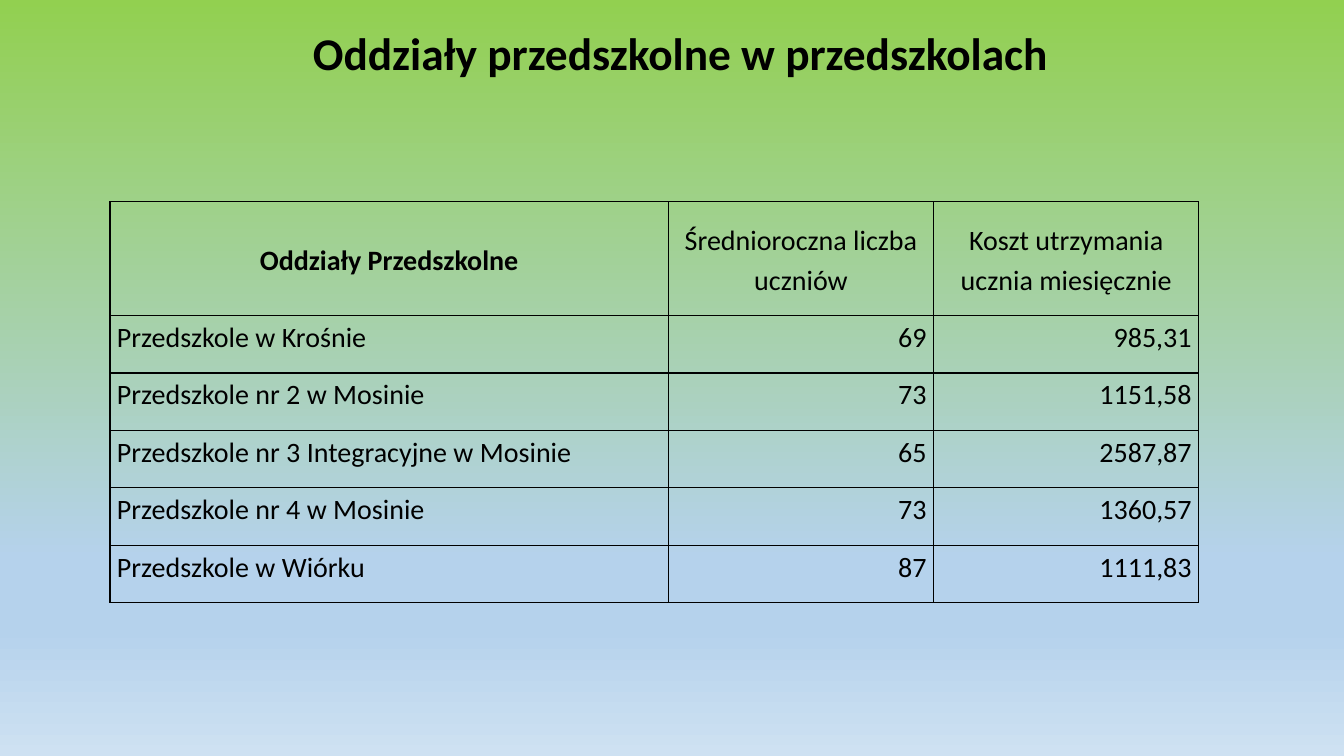
from pptx import Presentation
from pptx.dml.color import RGBColor
from pptx.enum.text import MSO_ANCHOR, PP_ALIGN
from pptx.oxml.ns import qn
from pptx.util import Inches, Pt
from lxml import etree

LEFT, CENTER, RIGHT = PP_ALIGN.LEFT, PP_ALIGN.CENTER, PP_ALIGN.RIGHT
TOP, MIDDLE = MSO_ANCHOR.TOP, MSO_ANCHOR.MIDDLE

# Content
TITLE = "Oddziały przedszkolne w przedszkolach\v"
HEADER = ("Oddziały Przedszkolne", "Średnioroczna liczba uczniów",
          "Koszt utrzymania ucznia miesięcznie")
ROWS = [
    ("Przedszkole w Krośnie", "69", "985,31"),
    ("Przedszkole nr 2 w Mosinie", "73", "1151,58"),
    ("Przedszkole nr 3 Integracyjne w Mosinie", "65", "2587,87"),
    ("Przedszkole nr 4 w Mosinie", "73", "1360,57"),
    ("Przedszkole w Wiórku", "87", "1111,83"),
]

THEME = {
    "font": "Calibri",
    "ink": "000000",
    "title_size": 32.4,
    "table_size": 20,
    "border_width": 1,
    "background": [(0, "92D050"), (74, "B5D2EC"), (83, "B5D2EC"), (100, "CEE1F2")],
}

# Layout in inches
TITLE_BOX = (1, 0.64, 11.5, 0.57)
TABLE_LEFT, TABLE_TOP = 1.09, 2
COLUMN_WIDTHS = (5.54, 2.63, 2.63)
ROW_HEIGHTS = [1.13] + [0.57] * len(ROWS)


def format_runs(paragraph, size, bold):
    for run in paragraph.runs:
        run.font.name = THEME["font"]
        run.font.size = Pt(size)
        run.font.bold = bold
        run.font.color.rgb = RGBColor.from_string(THEME["ink"])


def add_color(parent, color):
    etree.SubElement(parent, qn("a:srgbClr"), val=color)


def paint_background(slide):
    fill = slide.background.fill
    fill.gradient()
    fill.gradient_angle = 270
    stops = slide.element.find(".//" + qn("a:gsLst"))
    for stop in list(stops):
        stops.remove(stop)
    for percent, color in THEME["background"]:
        stop = etree.SubElement(stops, qn("a:gs"), pos=str(percent * 1000))
        add_color(stop, color)


def add_borders(cell):
    properties = cell._tc.get_or_add_tcPr()
    for index, side in enumerate(("lnL", "lnR", "lnT", "lnB")):
        line = etree.Element(qn("a:" + side), w=str(Pt(THEME["border_width"])))
        add_color(etree.SubElement(line, qn("a:solidFill")), THEME["ink"])
        properties.insert(index, line)


def fill_cell(cell, text, alignment, anchor, bold):
    cell.fill.background()
    cell.margin_left = cell.margin_right = Inches(0.07)
    cell.margin_top = cell.margin_bottom = 0
    cell.vertical_anchor = anchor
    paragraph = cell.text_frame.paragraphs[0]
    paragraph.text = text
    paragraph.alignment = alignment
    paragraph.line_spacing = 1.15
    paragraph.space_after = Pt(10)
    format_runs(paragraph, THEME["table_size"], bold)
    add_borders(cell)


def add_title(slide):
    title = slide.shapes.title
    title.left, title.top, title.width, title.height = map(Inches, TITLE_BOX)
    title.text_frame.vertical_anchor = MIDDLE
    paragraph = title.text_frame.paragraphs[0]
    paragraph.text = TITLE
    paragraph.alignment = CENTER
    paragraph.line_spacing = 0.9
    format_runs(paragraph, THEME["title_size"], True)


def add_cost_table(slide):
    frame = slide.shapes.add_table(
        len(ROW_HEIGHTS), len(COLUMN_WIDTHS), Inches(TABLE_LEFT), Inches(TABLE_TOP),
        Inches(sum(COLUMN_WIDTHS)), Inches(sum(ROW_HEIGHTS)))
    table = frame.table
    table.first_row = table.horz_banding = False
    for column, width in zip(table.columns, COLUMN_WIDTHS):
        column.width = Inches(width)
    for row, height in zip(table.rows, ROW_HEIGHTS):
        row.height = Inches(height)

    for row_index, values in enumerate([HEADER] + ROWS):
        is_header = row_index == 0
        for column_index, text in enumerate(values):
            is_name = column_index == 0
            body_alignment = LEFT if is_name else RIGHT
            fill_cell(table.cell(row_index, column_index), text,
                      CENTER if is_header else body_alignment,
                      MIDDLE if is_header else TOP,
                      is_header and is_name)


def main():
    presentation = Presentation()
    presentation.slide_width = Inches(13.33)
    presentation.slide_height = Inches(7.5)
    title_only = presentation.slide_layouts[5]
    slide = presentation.slides.add_slide(title_only)
    paint_background(slide)
    add_title(slide)
    add_cost_table(slide)
    presentation.save("out.pptx")


if __name__ == "__main__":
    main()
